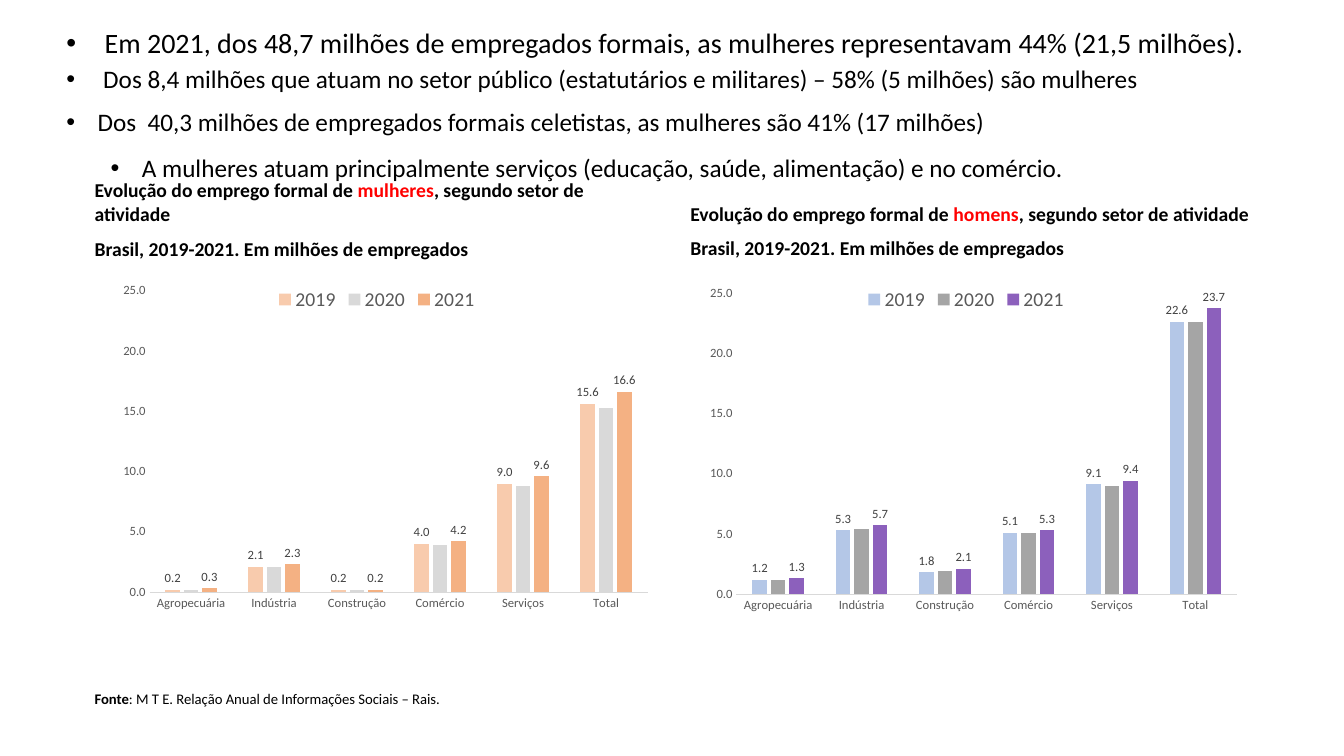
from lxml import etree
from pptx import Presentation
from pptx.chart.data import CategoryChartData
from pptx.dml.color import RGBColor
from pptx.enum.chart import XL_CHART_TYPE, XL_LABEL_POSITION, XL_LEGEND_POSITION, XL_TICK_MARK
from pptx.enum.text import MSO_ANCHOR
from pptx.oxml.ns import qn
from pptx.util import Inches, Pt

TOP, MIDDLE, BOTTOM = MSO_ANCHOR.TOP, MSO_ANCHOR.MIDDLE, MSO_ANCHOR.BOTTOM
COLUMNS = XL_CHART_TYPE.COLUMN_CLUSTERED
OUTSIDE_END = XL_LABEL_POSITION.OUTSIDE_END
LEGEND_TOP = XL_LEGEND_POSITION.TOP
NO_TICK = XL_TICK_MARK.NONE

THEME = {
    "font": "Calibri",
    "text": "000000", "accent": "FF0000", "axis": "595959",
    "label": "404040", "rule": "D9D9D9",
    "women": ["F8CBAD", "D9D9D9", "F4B183"],
    "men": ["B4C7E7", "A5A5A5", "8C60BC"],
    "lead": 20, "bullet": 18, "heading": 14, "legend": 14,
    "source": 10.5, "chart": 10, "small": 9,
}

deck = Presentation()
deck.slide_width, deck.slide_height = Inches(13.33), Inches(7.5)
page = deck.slides.add_slide(deck.slide_layouts[6])


def place(left, top, width, height):
    """Turn percentages of the slide into lengths."""
    across, down = deck.slide_width / 100, deck.slide_height / 100
    return int(left * across), int(top * down), int(width * across), int(height * down)


def add_text(paragraphs, area, size, anchor=TOP, indent=None, spacing=(1,), before=0):
    """Each paragraph is a list of (text, bold, colour) spans."""
    frame = page.shapes.add_textbox(*place(*area)).text_frame
    frame.word_wrap = True
    frame.vertical_anchor = anchor
    for number, spans in enumerate(paragraphs):
        para = frame.add_paragraph() if number else frame.paragraphs[0]
        para.line_spacing = spacing[min(number, len(spacing) - 1)]
        para.space_before = Pt(before if number else 0)
        if indent:
            properties = para._p.get_or_add_pPr()
            properties.set("marL", str(Inches(indent)))
            properties.set("indent", str(-Inches(indent)))
            etree.SubElement(properties, qn("a:buFont")).set("typeface", "Arial")
            etree.SubElement(properties, qn("a:buChar")).set("char", "•")
        for text, bold, color in spans:
            span = para.add_run()
            span.text = text
            span.font.name, span.font.size, span.font.bold = THEME["font"], Pt(size), bold
            span.font.color.rgb = RGBColor.from_string(THEME[color])


# Bullets: text, area, size, indent, anchor, line spacing
bullets = [
    ("Em 2021, dos 48,7 milhões de empregados formais, as mulheres representavam 44% (21,5 milhões).",
     (4.2, 2.13, 91.3, 7.6), "lead", 0.38, MIDDLE, 0.9),
    (" Dos 8,4 milhões que atuam no setor público (estatutários e militares) – 58% (5 milhões) são mulheres",
     (4.2, 7.73, 88.9, 5.33), "bullet", 0.31, TOP, 1),
    ("Dos  40,3 milhões de empregados formais celetistas, as mulheres são 41% (17 milhões)",
     (4.2, 13.47, 81.3, 5.33), "bullet", 0.31, TOP, 1),
    ("A mulheres atuam principalmente serviços (educação, saúde, alimentação) e no comércio.",
     (7.5, 19.47, 82.9, 5.33), "bullet", 0.31, TOP, 1),
]
for text, area, size, indent, anchor, spacing in bullets:
    add_text([[(text, False, "text")]], area, THEME[size],
             anchor=anchor, indent=indent, spacing=(spacing,))

# One panel for each group: heading and chart
sectors = ["Agropecuária", "Indústria", "Construção", "Comércio", "Serviços", "Total"]
years = ["2019", "2020", "2021"]
panels = [
    {"group": "mulheres", "colors": THEME["women"],
     "heading": (6.3, 24.67, 43.73, 10.4), "spacing": (1,), "before": 8,
     "chart": (6.9, 36.53, 42.3, 53.73), "plot": (0.1, 0.036, 0.876, 0.742),
     "values": [(0.2, 2.1, 0.2, 4.0, 9.0, 15.6),
                (0.2, 2.1, 0.2, 3.9, 8.8, 15.3),
                (0.3, 2.3, 0.2, 4.2, 9.6, 16.6)]},
    {"group": "homens", "colors": THEME["men"],
     "heading": (50.63, 26.67, 43.73, 8.4), "spacing": (1.07, 0.9), "before": 10,
     "chart": (50.63, 36.53, 42.53, 53.73), "plot": (0.098, 0.041, 0.876, 0.742),
     "values": [(1.2, 5.3, 1.8, 5.1, 9.1, 22.6),
                (1.2, 5.4, 1.9, 5.1, 9.0, 22.6),
                (1.3, 5.7, 2.1, 5.3, 9.4, 23.7)]},
]
for panel in panels:
    add_text([[("Evolução do emprego formal de ", True, "text"),
               (panel["group"], True, "accent"),
               (", segundo setor de atividade", True, "text")],
              [("Brasil, 2019-2021. Em milhões de empregados", True, "text")]],
             panel["heading"], THEME["heading"], anchor=BOTTOM,
             spacing=panel["spacing"], before=panel["before"])

    # Chart data and frame
    data = CategoryChartData(number_format="0.0")
    data.categories = sectors
    for year, values in zip(years, panel["values"]):
        data.add_series(year, values)
    chart = page.shapes.add_chart(COLUMNS, *place(*panel["chart"]), data).chart
    chart.has_title = False
    chart.has_legend = True
    chart.legend.position = LEGEND_TOP
    chart.legend.include_in_layout = False

    # Axes
    category_axis, value_axis = chart.category_axis, chart.value_axis
    for axis in (category_axis, value_axis):
        axis.major_tick_mark = axis.minor_tick_mark = NO_TICK
        axis.has_major_gridlines = False
    category_axis.format.line.color.rgb = RGBColor.from_string(THEME["rule"])
    category_axis.format.line.width = Pt(0.75)
    value_axis.format.line.fill.background()
    value_axis.minimum_scale, value_axis.maximum_scale, value_axis.major_unit = 0, 25, 5
    value_axis.tick_labels.number_format = "0.0"
    value_axis.tick_labels.number_format_is_linked = False

    # Bars, with labels on the first and last year
    plot = chart.plots[0]
    plot.gap_width, plot.overlap, plot.vary_by_categories = 219, -27, False
    fonts = [(chart.font, "chart", "text"), (chart.legend.font, "legend", "axis"),
             (category_axis.tick_labels.font, "small", "axis"),
             (value_axis.tick_labels.font, "small", "axis")]
    for series, color in zip(plot.series, panel["colors"]):
        series.format.fill.solid()
        series.format.fill.fore_color.rgb = RGBColor.from_string(color)
        if series.name != "2020":
            labels = series.data_labels
            labels.show_value = True
            labels.position = OUTSIDE_END
            labels.number_format, labels.number_format_is_linked = "0.0", False
            fonts.append((labels.font, "small", "label"))
    for font, size, color in fonts:
        font.name, font.size = THEME["font"], Pt(THEME[size])
        font.color.rgb = RGBColor.from_string(THEME[color])

    # Fixed inner plot area
    plot_area = chart.element.find(".//" + qn("c:plotArea"))
    for automatic in plot_area.findall(qn("c:layout")):
        plot_area.remove(automatic)
    layout = etree.Element(qn("c:layout"))
    plot_area.insert(0, layout)
    manual = etree.SubElement(layout, qn("c:manualLayout"))
    settings = [("layoutTarget", "inner"), ("xMode", "edge"), ("yMode", "edge"),
                *zip("xywh", panel["plot"])]
    for name, value in settings:
        etree.SubElement(manual, qn("c:" + name)).set("val", str(value))

# Source line
add_text([[("Fonte", True, "text"),
           (": M T E. Relação Anual de Informações Sociais – Rais.", False, "text")]],
         (6.3, 90.4, 50, 3.73), THEME["source"], spacing=(1.07,))

deck.save("out.pptx")
